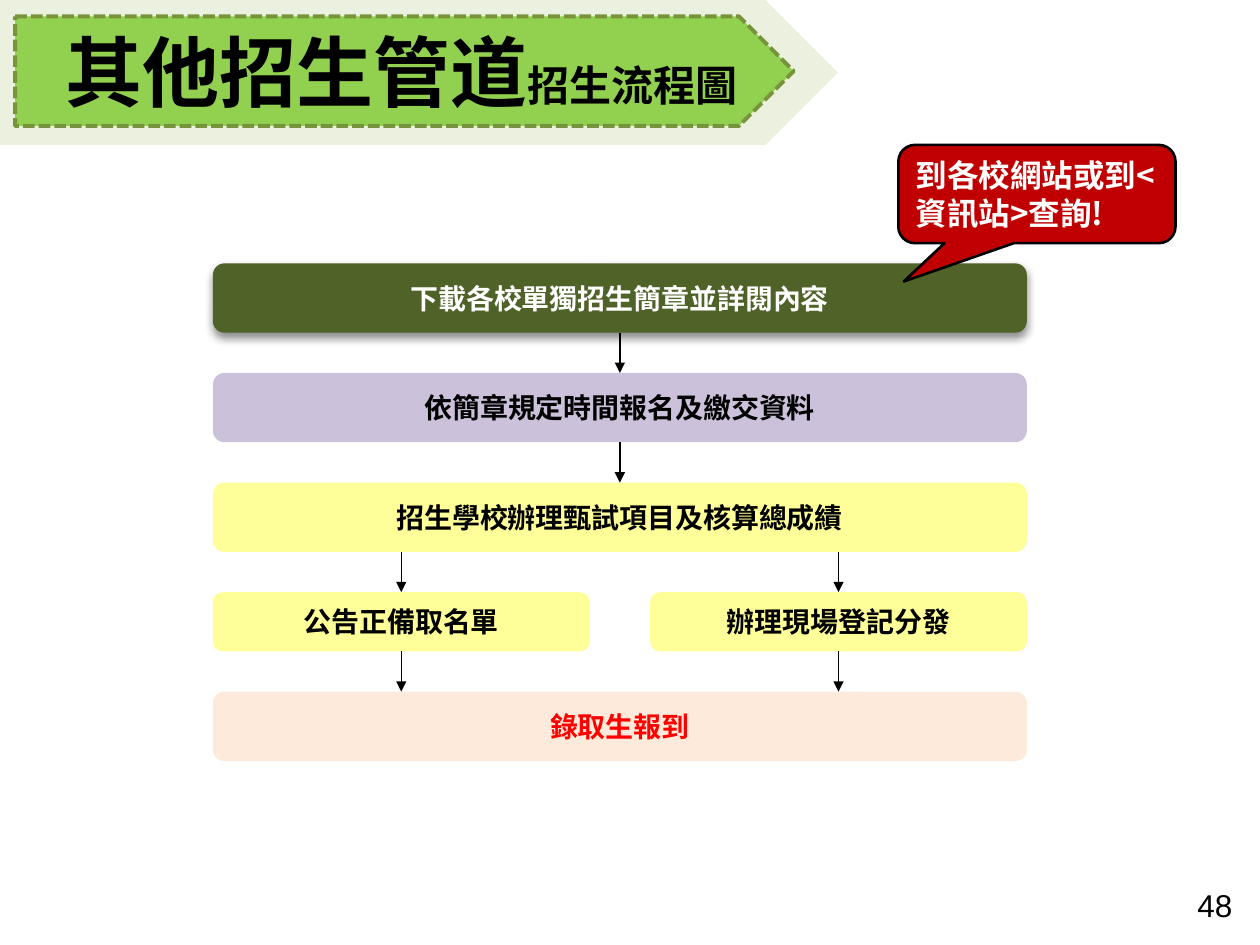
from lxml import etree
from pptx import Presentation
from pptx.dml.color import RGBColor
from pptx.enum.dml import MSO_LINE
from pptx.enum.shapes import MSO_CONNECTOR, MSO_SHAPE
from pptx.enum.text import MSO_ANCHOR, MSO_AUTO_SIZE, PP_ALIGN
from pptx.oxml import parse_xml
from pptx.oxml.ns import nsdecls, qn
from pptx.util import Inches, Pt

ROUND = MSO_SHAPE.ROUNDED_RECTANGLE
PLATE = MSO_SHAPE.PENTAGON
CALL = MSO_SHAPE.ROUNDED_RECTANGULAR_CALLOUT
LINE = MSO_CONNECTOR.STRAIGHT
DASH = MSO_LINE.SQUARE_DOT
MID = MSO_ANCHOR.MIDDLE
LEFT, MIDDLE, RIGHT = PP_ALIGN.LEFT, PP_ALIGN.CENTER, PP_ALIGN.RIGHT

THEME = {
    "black": "000000", "white": "FFFFFF", "red": "FF0000",
    "green": "4F6228", "violet": "CCC1DA", "yellow": "FFFF99",
    "peach": "FDEADA", "pale": "EBF1DE", "lime": "92D050",
    "olive": "77933C", "crimson": "C00000",
    "font": "Noto Sans CJK SC", "head": "Noto Sans Mono", "num": "Arial",
    "big": 44, "sub": 24, "note": 18, "step": 16,
}

TITLE = [("其他招生管道", "big"), ("招生流程圖", "sub")]
NOTE = "到各校網站或到<資訊站>查詢!"
PAGE = "48"
ROWS = [
    (0.55, "green", "white", ["下載各校單獨招生簡章並詳閱內容"]),
    (0.55, "violet", "black", ["依簡章規定時間報名及繳交資料"]),
    (0.55, "yellow", "black", ["招生學校辦理甄試項目及核算總成績"]),
    (0.47, "yellow", "black", ["公告正備取名單", "辦理現場登記分發"]),
    (0.55, "peach", "red", ["錄取生報到"]),
]
X, Y, WIDTH, GAP, GUTTER = 1.69, 2.09, 6.46, 0.32, 0.48


def color(name):
    return RGBColor.from_string(THEME[name])


def box(kind, at, fill, line=None, weight=1):
    shape = slide.shapes.add_shape(kind, *map(Inches, at))
    shape.shadow.inherit = False
    shape.fill.solid()
    shape.fill.fore_color.rgb = color(fill)
    if line:
        shape.line.color.rgb = color(line)
        shape.line.width = Pt(weight)
    else:
        shape.line.fill.background()
    return shape


def write(shape, runs, tint, font="font", align=LEFT, bold=True, wrap=True):
    frame = shape.text_frame
    frame.word_wrap = wrap
    frame.auto_size = MSO_AUTO_SIZE.NONE
    frame.vertical_anchor = MID
    para = frame.paragraphs[0]
    para.alignment = align
    for text, size in runs:
        run = para.add_run()
        run.text = text
        run.font.size = Pt(THEME[size])
        run.font.bold = bold
        run.font.name = THEME[font]
        run.font.color.rgb = color(tint)
        east = etree.SubElement(run.font._element, qn("a:ea"))
        east.set("typeface", THEME[font])


def arrow(x, top, end):
    link = slide.shapes.add_connector(LINE, *map(Inches, (x, top, x, end)))
    link.line.color.rgb = color("black")
    link.line.width = Pt(0.75)
    tip = etree.SubElement(link.line._get_or_add_ln(), qn("a:tailEnd"))
    tip.set("type", "triangle")
    etree.SubElement(link._element.spPr, qn("a:effectLst"))


def shade(shape):
    props = shape._element.spPr
    props.remove(props.find(qn("a:effectLst")))
    props.append(parse_xml(
        f'<a:effectLst {nsdecls("a")}><a:outerShdw blurRad="{Pt(5)}" '
        f'dist="{Pt(3)}" dir="5400000" rotWithShape="0">'
        f'<a:srgbClr val="{THEME["black"]}"><a:alpha val="45000"/></a:srgbClr>'
        '</a:outerShdw></a:effectLst>'))


def flow():
    y, prior = Y, 0
    for high, fill, tint, texts in ROWS:
        count = len(texts)
        wide = (WIDTH - GUTTER * (count - 1)) / count
        mids = []
        for i, text in enumerate(texts):
            left = X + i * (wide + GUTTER)
            step = box(ROUND, (left, y, wide, high), fill)
            write(step, [(text, "step")], tint, align=MIDDLE, wrap=False)
            mids.append(left + wide / 2)
            if not prior:
                shade(step)
        if prior:
            for x in mids if count >= prior else last:
                arrow(x, y - GAP, y)
        prior, last = count, mids
        y += high + GAP


def banner():
    box(PLATE, (-0.04, 0, 6.69, 1.15), "pale")
    at = (0.12, 0.13, 6.18, 0.87)
    plate = box(PLATE, at, "lime", "olive", 2.25)
    plate.line.dash_style = DASH
    title = slide.shapes.title
    title.left, title.top, title.width, title.height = map(Inches, at)
    frame = title.text_frame
    frame.margin_left = Inches(0.4)
    frame.margin_right = frame.margin_top = frame.margin_bottom = 0
    write(title, TITLE, "black", "head")
    plate._element.addnext(title._element)


def callout():
    note = box(CALL, (7.13, 1.15, 2.2, 0.78), "crimson", "black", 1.5)
    for i, value in enumerate((-0.48, 0.89, 0.17)):
        note.adjustments[i] = value
    write(note, [(NOTE, "note")], "white")


def number():
    page = slide.shapes.add_textbox(*map(Inches, (9.25, 6.98, 0.63, 0.4)))
    write(page, [(PAGE, "note")], "black", "num", RIGHT, False)


deck = Presentation()
deck.slide_width, deck.slide_height = Inches(10), Inches(7.5)
slide = deck.slides.add_slide(deck.slide_layouts[5])
flow()
banner()
callout()
number()
deck.save("out.pptx")
